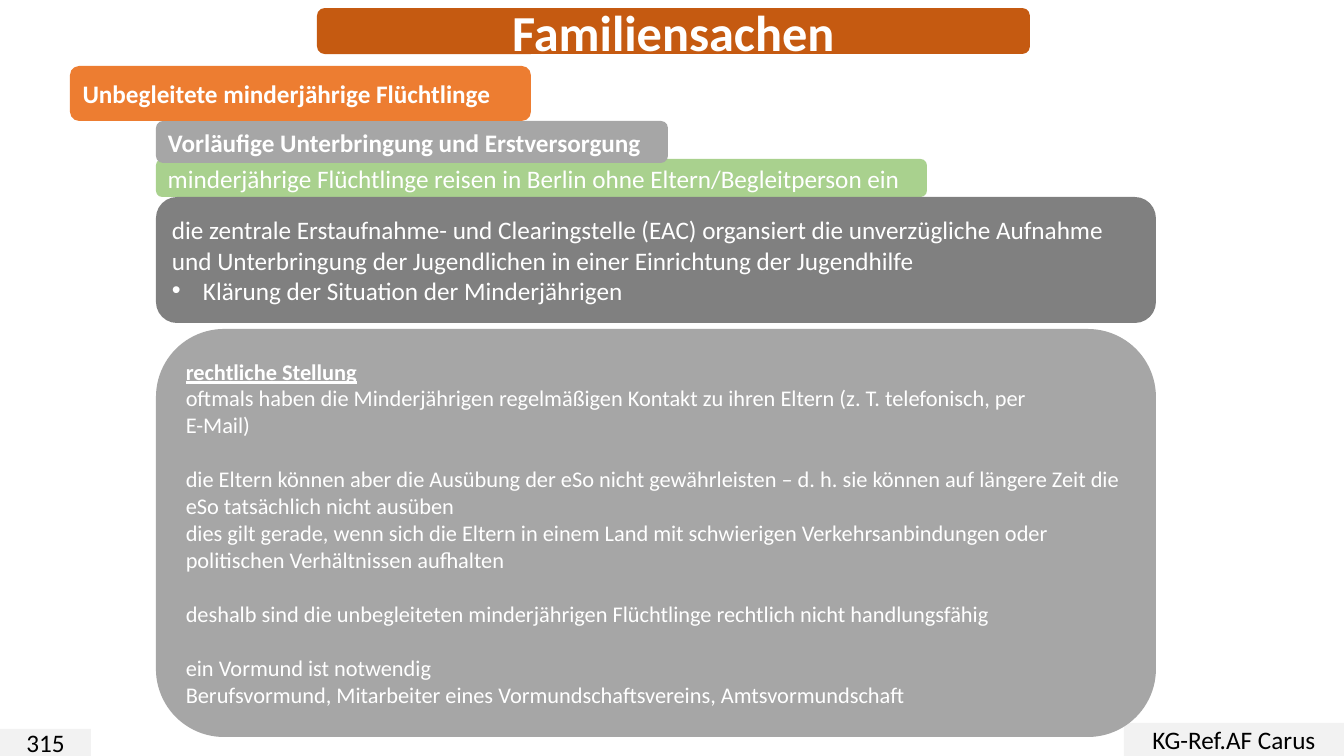
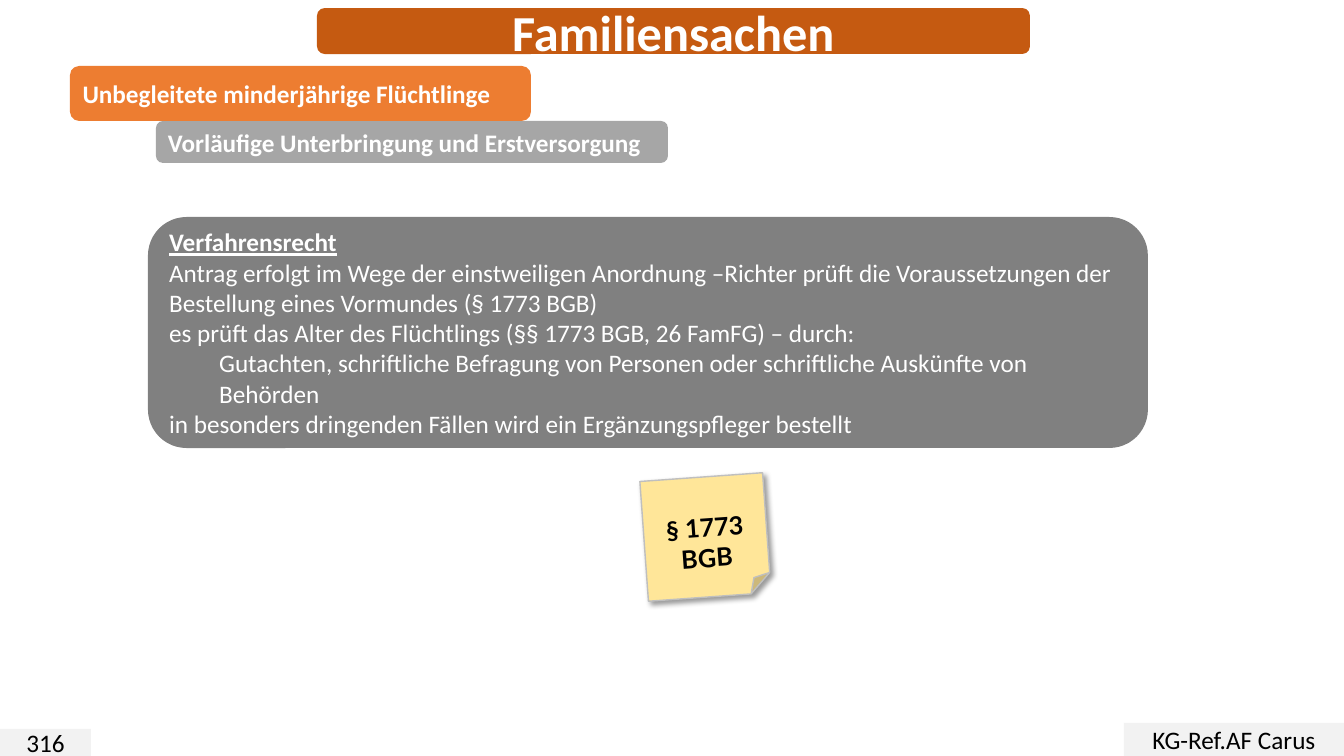
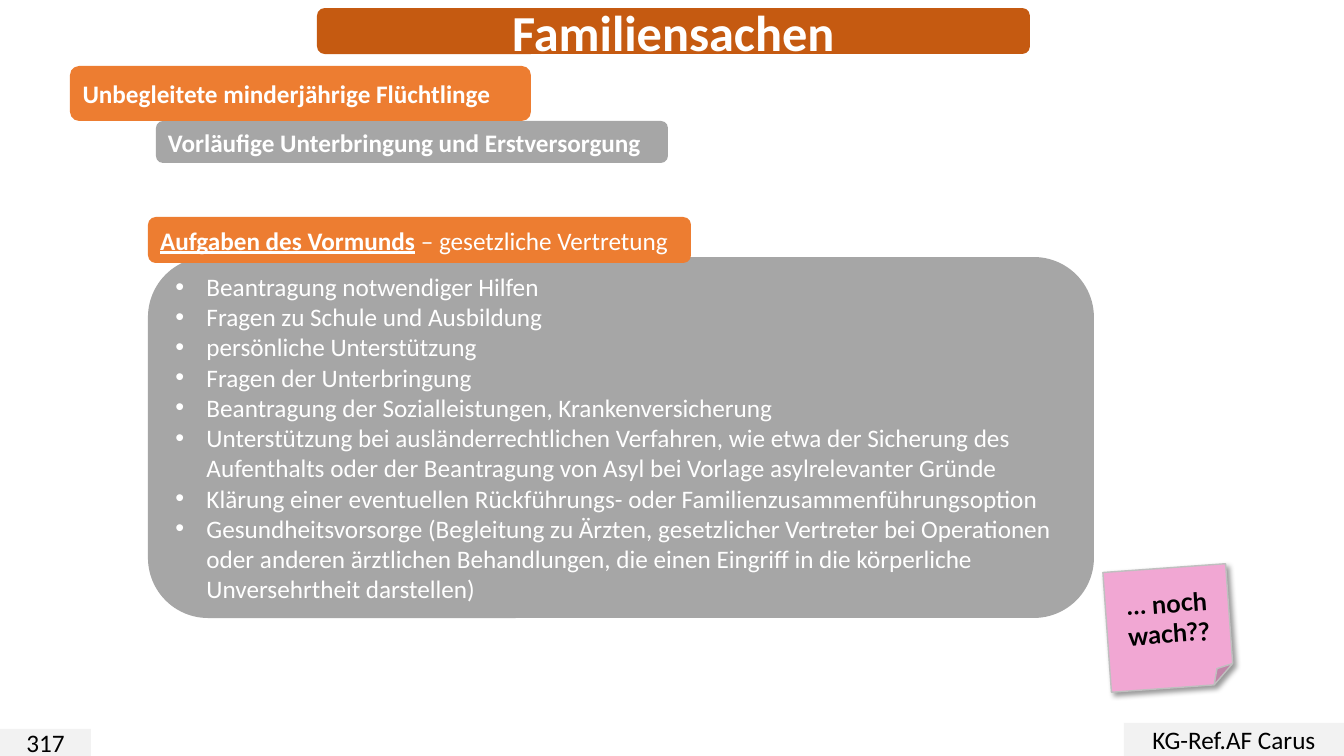
from lxml import etree
from pptx import Presentation
from pptx.dml.color import RGBColor
from pptx.enum import shapes, text
from pptx.oxml import ns
from pptx.util import Pt

EMU_PER_PX = 914400 / 100.8
SLIDE_WIDTH, SLIDE_HEIGHT = 1344, 756

WHITE, BLACK = "FFFFFF", "000000"
RUST, ORANGE, GREEN = "C55A11", "ED7D31", "A9D18E"
LIGHT_GREY, MID_GREY, DARK_GREY = "F2F2F2", "A6A6A6", "808080"
YELLOW, PINK, NOTE_LINE = "FFE699", "F1A7D3", "BFBFBF"

ROUNDED = shapes.MSO_SHAPE.ROUNDED_RECTANGLE
RECTANGLE = shapes.MSO_SHAPE.RECTANGLE
FOLDED = shapes.MSO_SHAPE.FOLDED_CORNER
CENTER = text.PP_ALIGN.CENTER
LEFT = text.PP_ALIGN.LEFT

BODY = {"name": "Calibri", "size": Pt(18), "bold": False}
STRONG = {**BODY, "bold": True}
HEADING = {**STRONG, "underline": True}
TITLE = {**STRONG, "size": Pt(36)}
SMALL = {**BODY, "size": Pt(16)}
SMALL_HEADING = {**HEADING, "size": Pt(16)}
NOTE = {**STRONG, "name": "Lato"}

INDENT = 31
GAP = Pt(19.5)


def px(length):
    return round(length * EMU_PER_PX)


def color(value):
    return RGBColor.from_string(value)


def child(parent, tag, **attributes):
    return etree.SubElement(parent, ns.qn(tag), attributes)


def item(words, font=BODY, **options):
    return {"runs": [(words, font)], **options}


def bullet(words):
    return item(words, indent=INDENT, hanging=True)


def write_paragraph(paragraph, content, ink, alignment):
    paragraph.alignment = alignment
    paragraph.space_before = content.get("before", Pt(0))
    properties = paragraph._p.get_or_add_pPr()
    indent = px(content.get("indent", 0))
    hanging = content.get("hanging", False)
    properties.set("marL", str(indent))
    properties.set("indent", str(-indent if hanging else 0))
    if hanging:
        child(properties, "a:buFont", typeface="Arial")
        child(properties, "a:buChar", char="•")
    for words, font in content["runs"]:
        for number, line in enumerate(words.split("\n")):
            if number:
                paragraph.add_line_break()
            run = paragraph.add_run()
            run.text = line
            run.font.color.rgb = color(ink)
            for name, value in font.items():
                setattr(run.font, name, value)


def write(frame, contents, ink=WHITE, alignment=LEFT):
    frame.word_wrap = True
    frame.vertical_anchor = text.MSO_ANCHOR.MIDDLE
    for number, content in enumerate(contents):
        paragraph = frame.add_paragraph() if number else frame.paragraphs[0]
        write_paragraph(paragraph, content, ink, alignment)


def add_panel(slide, box, fill, contents=(), kind=ROUNDED, ink=WHITE, alignment=LEFT):
    shape = slide.shapes.add_shape(kind, *map(px, box))
    shape.shadow.inherit = False
    shape.fill.solid()
    shape.fill.fore_color.rgb = color(fill)
    shape.line.fill.background()
    write(shape.text_frame, contents, ink, alignment)
    return shape


def add_note(slide, left, top, fill, contents, margin_top=5):
    note = add_panel(slide, (left, top, 123, 120), fill, contents, FOLDED, BLACK, CENTER)
    note.rotation = 355.9
    note.line.color.rgb = color(NOTE_LINE)
    note.line.width = Pt(1)
    note.text_frame.margin_top = px(margin_top)
    effects = note._element.spPr.find(ns.qn("a:effectLst"))
    shadow = child(effects, "a:outerShdw", blurRad=str(Pt(4)), dist=str(Pt(3)),
                   dir="2700000", algn="tl", rotWithShape="0")
    child(child(shadow, "a:srgbClr", val=BLACK), "a:alpha", val="40000")


def add_title(slide, box):
    left, top, width, height = box
    add_panel(slide, box, RUST)
    title = slide.shapes.title
    title.element.getparent().append(title.element)
    overhang = 8
    area = {"left": left, "top": top - overhang, "width": width, "height": height + 2 * overhang}
    for name, value in area.items():
        setattr(title, name, px(value))
    frame = title.text_frame
    frame.auto_size = text.MSO_AUTO_SIZE.NONE
    frame.margin_top = frame.margin_bottom = 0
    write(frame, [item("Familiensachen", TITLE)], alignment=CENTER)


def add_footer(slide, number):
    for box, words in (((0, 729, 91, 27), str(number)),
                       ((1124, 723, 220, 33), "KG-Ref.AF Carus")):
        add_panel(slide, box, LIGHT_GREY, [item(words)], RECTANGLE, BLACK, CENTER)


def add_frame(slide, number):
    add_title(slide, (317, 8, 713, 46))
    add_footer(slide, number)
    add_panel(slide, (156, 121, 512, 42), MID_GREY,
              [item("Vorläufige Unterbringung und Erstversorgung", STRONG)])
    add_panel(slide, (70, 66, 461, 55), ORANGE,
              [item("Unbegleitete minderjährige Flüchtlinge", STRONG)])


def build_legal_status(slide, number):
    add_panel(slide, (156, 159, 771, 38), GREEN,
              [item("minderjährige Flüchtlinge reisen in Berlin ohne Eltern/Begleitperson ein")])
    add_frame(slide, number)
    add_panel(slide, (156, 197, 1000, 126), DARK_GREY, [
        item("die zentrale Erstaufnahme- und Clearingstelle (EAC) organsiert die unverzügliche "
             "Aufnahme und Unterbringung der Jugendlichen in einer Einrichtung der Jugendhilfe"),
        bullet("Klärung der Situation der Minderjährigen"),
    ])
    add_panel(slide, (156, 329, 1000, 408), MID_GREY, [
        item("rechtliche Stellung", SMALL_HEADING),
        item("oftmals haben die Minderjährigen regelmäßigen Kontakt zu ihren Eltern "
             "(z. T. telefonisch, per\nE-Mail)", SMALL),
        item("die Eltern können aber die Ausübung der eSo nicht gewährleisten – d. h. sie können "
             "auf längere Zeit die eSo tatsächlich nicht ausüben", SMALL, before=GAP),
        item("dies gilt gerade, wenn sich die Eltern in einem Land mit schwierigen "
             "Verkehrsanbindungen oder politischen Verhältnissen aufhalten", SMALL),
        item("deshalb sind die unbegleiteten minderjährigen Flüchtlinge rechtlich nicht "
             "handlungsfähig", SMALL, before=GAP),
        item("ein Vormund ist notwendig", SMALL, before=GAP),
        item("Berufsvormund, Mitarbeiter eines Vormundschaftsvereins, Amtsvormundschaft", SMALL),
    ])


def build_procedure(slide, number):
    add_frame(slide, number)
    add_note(slide, 644, 477, YELLOW, [item("§ 1773", NOTE), item("BGB", NOTE)], margin_top=36)
    add_panel(slide, (148, 217, 1000, 231), DARK_GREY, [
        item("Verfahrensrecht", HEADING),
        item("Antrag erfolgt im Wege der einstweiligen Anordnung –Richter prüft die "
             "Voraussetzungen der Bestellung eines Vormundes (§ 1773 BGB)"),
        item("es prüft das Alter des Flüchtlings (§§ 1773 BGB, 26 FamFG) – durch:"),
        item("Gutachten, schriftliche Befragung von Personen oder schriftliche Auskünfte "
             "von Behörden", indent=50),
        item("in besonders dringenden Fällen wird ein Ergänzungspfleger bestellt"),
    ])


def build_guardian_tasks(slide, number):
    tasks = (
        "Beantragung notwendiger Hilfen",
        "Fragen zu Schule und Ausbildung",
        "persönliche Unterstützung",
        "Fragen der Unterbringung",
        "Beantragung der Sozialleistungen, Krankenversicherung",
        "Unterstützung bei ausländerrechtlichen Verfahren, wie etwa der Sicherung des "
        "Aufenthalts oder der Beantragung von Asyl bei Vorlage asylrelevanter Gründe",
        "Klärung einer eventuellen Rückführungs- oder Familienzusammenführungsoption",
        "Gesundheitsvorsorge (Begleitung zu Ärzten, gesetzlicher Vertreter bei Operationen "
        "oder anderen ärztlichen Behandlungen, die einen Eingriff in die körperliche "
        "Unversehrtheit darstellen)",
    )
    add_panel(slide, (148, 257, 946, 361), MID_GREY, [bullet(task) for task in tasks])
    add_note(slide, 1107, 568, PINK, [item("… noch wach??", NOTE)])
    add_frame(slide, number)
    add_panel(slide, (148, 217, 543, 46), ORANGE, [
        {"runs": [("Aufgaben des Vormunds", HEADING), (" – gesetzliche Vertretung", BODY)]},
    ])


def main():
    presentation = Presentation()
    presentation.slide_width = px(SLIDE_WIDTH)
    presentation.slide_height = px(SLIDE_HEIGHT)
    title_only = presentation.slide_layouts[5]
    builders = (build_legal_status, build_procedure, build_guardian_tasks)
    for number, build in enumerate(builders, start=315):
        build(presentation.slides.add_slide(title_only), number)
    presentation.save("out.pptx")


if __name__ == "__main__":
    main()
